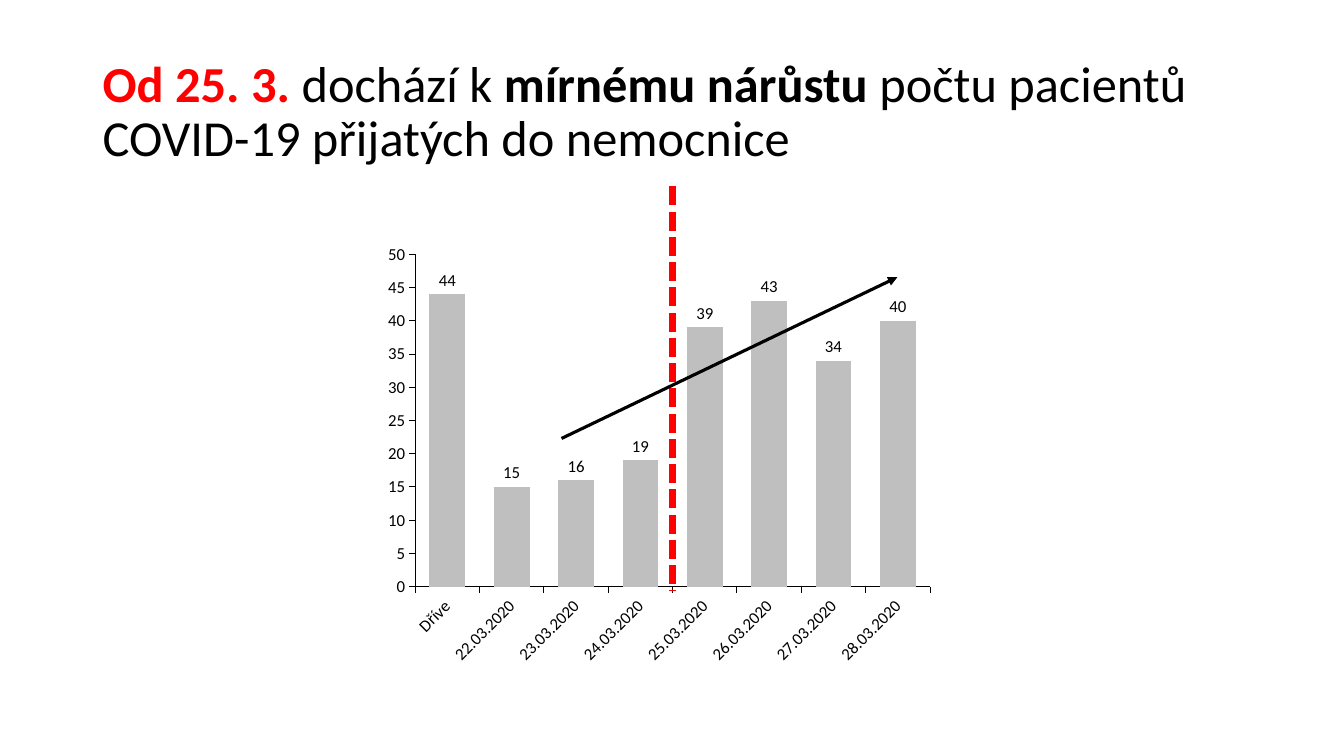
from dataclasses import dataclass

from lxml import etree
from pptx import Presentation
from pptx.chart.axis import CategoryAxis, ValueAxis
from pptx.chart.chart import Chart
from pptx.chart.data import CategoryChartData
from pptx.dml.color import RGBColor
from pptx.enum.chart import XL_CHART_TYPE, XL_LABEL_POSITION, XL_TICK_MARK
from pptx.enum.dml import MSO_LINE
from pptx.enum.shapes import MSO_CONNECTOR
from pptx.enum.text import MSO_ANCHOR
from pptx.oxml.ns import qn
from pptx.slide import Slide
from pptx.text.text import Font
from pptx.util import Inches, Pt

COLUMNS = XL_CHART_TYPE.COLUMN_CLUSTERED
OUTSIDE_END = XL_LABEL_POSITION.OUTSIDE_END
TICK_OUTSIDE = XL_TICK_MARK.OUTSIDE
TICK_NONE = XL_TICK_MARK.NONE
SHORT_DASH = MSO_LINE.SQUARE_DOT
STRAIGHT = MSO_CONNECTOR.STRAIGHT
MIDDLE = MSO_ANCHOR.MIDDLE


@dataclass(frozen=True)
class Theme:
    font: str = "Calibri"
    text: RGBColor = RGBColor(0, 0, 0)
    accent: RGBColor = RGBColor(255, 0, 0)
    column: RGBColor = RGBColor(0xBF, 0xBF, 0xBF)
    title_size: float = 36
    chart_size: float = 12
    axis_width: float = 0.75


THEME = Theme()


@dataclass(frozen=True)
class TitleRun:
    text: str
    bold: bool = False
    color: RGBColor = THEME.text


@dataclass(frozen=True)
class Line:
    start: tuple[float, float]
    end: tuple[float, float]
    color: RGBColor
    width: float
    dashed: bool = False
    arrow: bool = False


TITLE = [
    TitleRun("Od 25. 3. ", True, THEME.accent),
    TitleRun("dochází k "),
    TitleRun("mírnému nárůstu ", True),
    TitleRun("počtu pacientů COVID-19 přijatých do nemocnice"),
]
ADMISSIONS = {
    "Dříve": 44,
    "22.03.2020": 15,
    "23.03.2020": 16,
    "24.03.2020": 19,
    "25.03.2020": 39,
    "26.03.2020": 43,
    "27.03.2020": 34,
    "28.03.2020": 40,
}
PLOT_LAYOUT = {"x": 0.1, "y": 0.04, "w": 0.9, "h": 0.76}
LINES = [
    Line((6.67, 1.85), (6.67, 5.86), THEME.accent, 4.5, dashed=True),
    Line((5.57, 4.35), (8.9, 2.75), THEME.text, 2.25, arrow=True),
]


def style_font(font: Font, size: float, color: RGBColor, bold: bool = False) -> None:
    font.name = THEME.font
    font.size = Pt(size)
    font.color.rgb = color
    font.bold = bold


def add_title(slide: Slide) -> None:
    box = slide.shapes.add_textbox(Inches(0.92), Inches(0.4), Inches(11.5), Inches(1.45))
    frame = box.text_frame
    frame.word_wrap = True
    frame.vertical_anchor = MIDDLE
    paragraph = frame.paragraphs[0]
    paragraph.line_spacing = 0.9
    for part in TITLE:
        run = paragraph.add_run()
        run.text = part.text
        style_font(run.font, THEME.title_size, part.color, part.bold)


def style_axis(axis: CategoryAxis | ValueAxis) -> None:
    axis.has_major_gridlines = False
    axis.major_tick_mark = TICK_OUTSIDE
    axis.minor_tick_mark = TICK_NONE
    axis.format.line.color.rgb = THEME.text
    axis.format.line.width = Pt(THEME.axis_width)
    style_font(axis.tick_labels.font, THEME.chart_size, THEME.text)


def place_plot(chart: Chart) -> None:
    """Fix the inner plot area as fractions of the chart frame."""
    plot_area = chart.plots[0]._element.getparent()
    for old_layout in plot_area.findall(qn("c:layout")):
        plot_area.remove(old_layout)
    layout = etree.Element(qn("c:layout"))
    manual = etree.SubElement(layout, qn("c:manualLayout"))
    settings = {"layoutTarget": "inner", "xMode": "edge", "yMode": "edge", **PLOT_LAYOUT}
    for name, value in settings.items():
        etree.SubElement(manual, qn(f"c:{name}")).set("val", str(value))
    plot_area.insert(0, layout)


def add_admissions_chart(slide: Slide) -> None:
    data = CategoryChartData(number_format="#,##0")
    data.categories = list(ADMISSIONS)
    data.add_series("Series 1", list(ADMISSIONS.values()))
    frame = slide.shapes.add_chart(
        COLUMNS, Inches(3.55), Inches(2.35), Inches(5.68), Inches(4.34), data
    )
    chart = frame.chart
    chart.has_title = False
    chart.has_legend = False
    style_font(chart.font, THEME.chart_size, THEME.text)
    for axis in (chart.category_axis, chart.value_axis):
        style_axis(axis)
    chart.value_axis.minimum_scale = 0
    chart.value_axis.maximum_scale = 50
    chart.value_axis.major_unit = 5
    label_body = chart.category_axis._element.find(qn("c:txPr")).find(qn("a:bodyPr"))
    label_body.set("rot", str(-45 * 60000))

    plot = chart.plots[0]
    plot.vary_by_categories = False
    plot.gap_width = 80
    plot.overlap = -10
    series = plot.series[0]
    series.format.fill.solid()
    series.format.fill.fore_color.rgb = THEME.column
    labels = series.data_labels
    labels.show_value = True
    labels.number_format = "#,##0"
    labels.number_format_is_linked = False
    labels.position = OUTSIDE_END
    style_font(labels.font, THEME.chart_size, THEME.text)
    place_plot(chart)


def add_line(slide: Slide, line: Line) -> None:
    points = [Inches(value) for value in (*line.start, *line.end)]
    connector = slide.shapes.add_connector(STRAIGHT, *points)
    connector.line.color.rgb = line.color
    connector.line.width = Pt(line.width)
    if line.dashed:
        connector.line.dash_style = SHORT_DASH
    properties = connector._element.spPr
    if line.arrow:
        outline = properties.find(qn("a:ln"))
        etree.SubElement(outline, qn("a:tailEnd")).set("type", "triangle")
    etree.SubElement(properties, qn("a:effectLst"))


def main() -> None:
    presentation = Presentation()
    presentation.slide_width = Inches(13.33)
    presentation.slide_height = Inches(7.5)
    slide = presentation.slides.add_slide(presentation.slide_layouts[6])
    add_title(slide)
    add_admissions_chart(slide)
    for line in LINES:
        add_line(slide, line)
    presentation.save("out.pptx")


if __name__ == "__main__":
    main()
